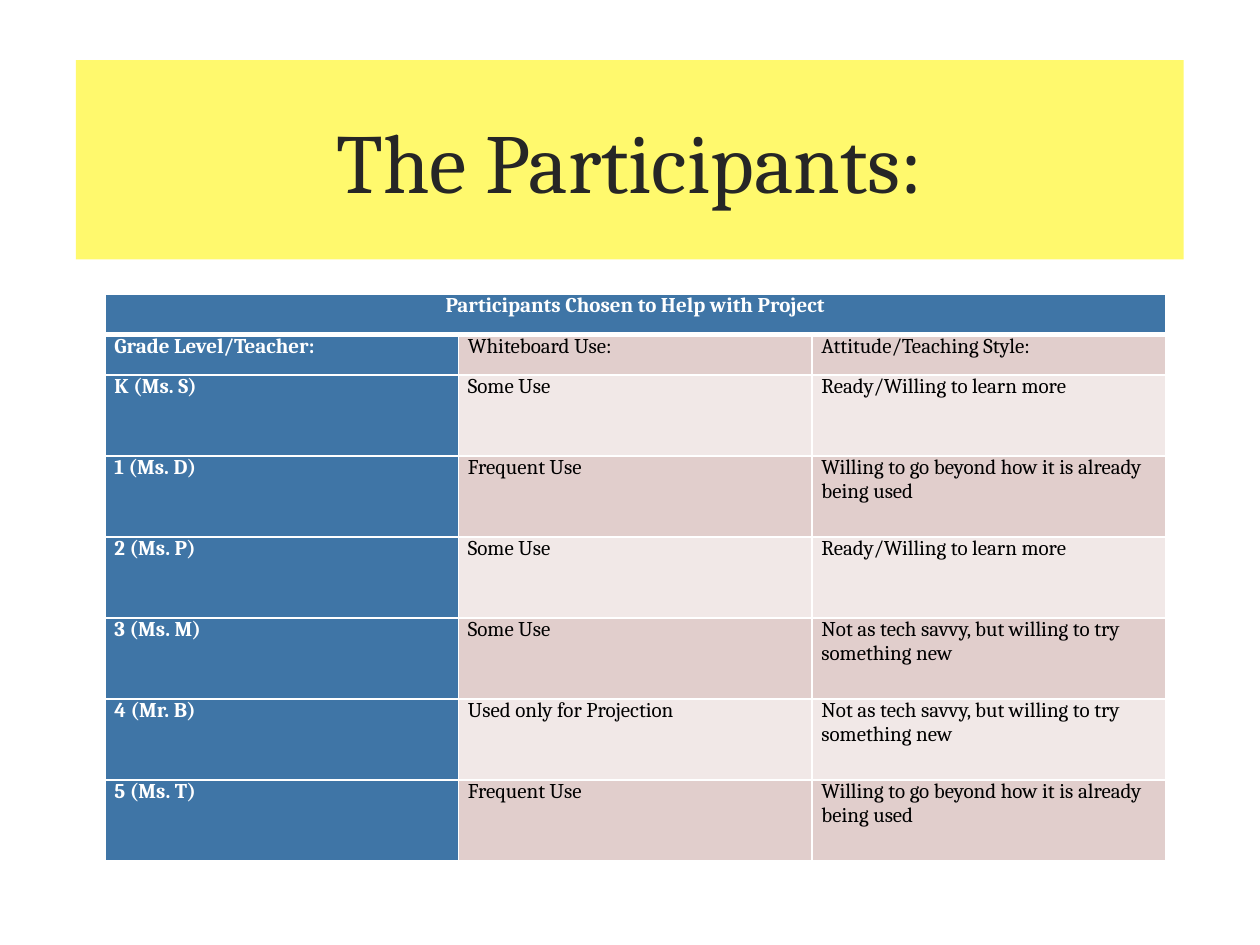
from lxml import etree
from pptx import Presentation
from pptx.dml.color import RGBColor
from pptx.enum.shapes import MSO_SHAPE
from pptx.enum.text import MSO_ANCHOR, PP_ALIGN
from pptx.oxml.ns import qn
from pptx.util import Pt

RECT = MSO_SHAPE.RECTANGLE
MIDDLE, TOP = MSO_ANCHOR.MIDDLE, MSO_ANCHOR.TOP
LEFT, CENTER = PP_ALIGN.LEFT, PP_ALIGN.CENTER

YELLOW = RGBColor(0xFF, 0xF9, 0x6D)
BLUE = RGBColor(0x3F, 0x75, 0xA6)
ROSE = RGBColor(0xE1, 0xCE, 0xCC)
PALE = RGBColor(0xF1, 0xE8, 0xE7)
DARK = RGBColor(0x26, 0x26, 0x26)
BLACK = RGBColor(0, 0, 0)
WHITE = RGBColor(0xFF, 0xFF, 0xFF)

HEAD = "Participants Chosen to Help with Project"
ROWS = [
    ("Grade Level/Teacher:", "Whiteboard Use:", "Attitude/Teaching Style:"),
    ("K (Ms. S)", "Some Use", "Ready/Willing to learn more"),
    ("1 (Ms. D)", "Frequent Use", "Willing to go beyond how it is already being used"),
    ("2 (Ms. P)", "Some Use", "Ready/Willing to learn more"),
    ("3 (Ms. M)", "Some Use", "Not as tech savvy, but willing to try something new"),
    ("4 (Mr. B)", "Used only for Projection", "Not as tech savvy, but willing to try something new"),
    ("5 (Ms. T)", "Frequent Use", "Willing to go beyond how it is already being used"),
]


def write(frame, text, size=12, color=BLACK, bold=False, align=LEFT):
    para = frame.paragraphs[0]
    para.text = text
    para.alignment = align
    font = para.font
    font.name, font.size, font.bold = "Cambria", Pt(size), bold
    font.color.rgb = color


def style(cell, fill, top=1, base=1):
    cell.fill.solid()
    cell.fill.fore_color.rgb = fill
    cell.margin_left = cell.margin_right = Pt(5.4)
    cell.margin_top = cell.margin_bottom = 0
    cell.vertical_anchor = TOP
    # White borders go ahead of the fill
    props = cell._tc.get_or_add_tcPr()
    edges = [("a:lnL", 1), ("a:lnR", 1), ("a:lnT", top), ("a:lnB", base)]
    for i, (tag, width) in enumerate(edges):
        line = etree.Element(qn(tag), w=str(Pt(width)))
        solid = etree.SubElement(line, qn("a:solidFill"))
        etree.SubElement(solid, qn("a:srgbClr"), val=str(WHITE))
        props.insert(i, line)


prs = Presentation()
prs.slide_width, prs.slide_height = Pt(720), Pt(540)
slide = prs.slides.add_slide(prs.slide_layouts[6])

# Title band
band = slide.shapes.add_shape(RECT, Pt(43.4), Pt(34.4), Pt(633), Pt(113.8))
band.shadow.inherit = False
band.fill.solid()
band.fill.fore_color.rgb = YELLOW
band.line.fill.background()
band.text_frame.word_wrap = True
band.text_frame.vertical_anchor = MIDDLE
write(band.text_frame, "The Participants:", size=48, color=DARK, align=CENTER)

# Table grid: two short rows, then rows twice as high
count = len(ROWS) + 1
unit = 324 / 14
table = slide.shapes.add_table(count, 3, Pt(60), Pt(168), Pt(606), Pt(324)).table
for col in table.columns:
    col.width = Pt(202)
for i, row in enumerate(table.rows):
    row.height = Pt(unit if i < 2 else 2 * unit)

# Heading across all columns, with a thick rule below
for cell in table.rows[0].cells:
    style(cell, BLUE, base=3)
table.cell(0, 0).merge(table.cell(0, 2))
write(table.cell(0, 0).text_frame, HEAD, color=WHITE, bold=True, align=CENTER)

# Body: blue first column, banded rest
for r, texts in enumerate(ROWS, 1):
    for c, text in enumerate(texts):
        cell = table.cell(r, c)
        first = c == 0
        style(cell, BLUE if first else ROSE if r % 2 else PALE, top=3 if r == 1 else 1)
        write(cell.text_frame, text, color=WHITE if first else BLACK, bold=first)

prs.save("out.pptx")
